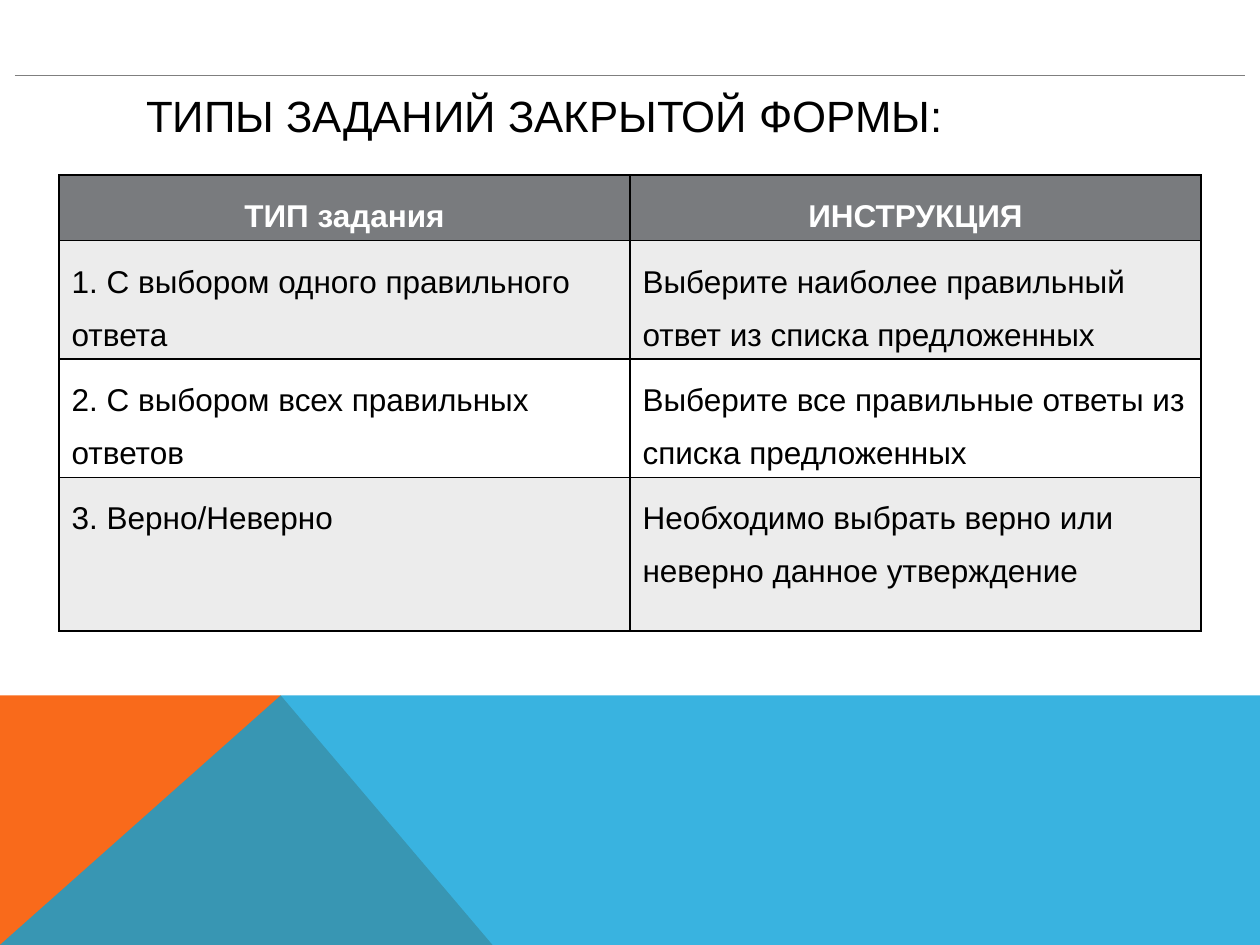
from dataclasses import dataclass

from lxml.etree import SubElement
from pptx import Presentation
from pptx.dml.color import RGBColor
from pptx.enum.shapes import MSO_CONNECTOR
from pptx.enum.text import MSO_ANCHOR, MSO_AUTO_SIZE, PP_ALIGN
from pptx.oxml import parse_xml
from pptx.oxml.ns import nsdecls, qn
from pptx.util import Cm, Pt


@dataclass(frozen=True)
class Theme:
    font: str = "Arial"
    title_size: int = 25
    body_size: int = 18
    text: str = "000000"
    inverse: str = "FFFFFF"
    header: str = "797B7E"
    bands: tuple = ("ECECEC", "FFFFFF")
    border: str = "000000"
    rule: str = "7F7F7F"
    orange: str = "F96A1B"
    blue: str = "08A1D9"


THEME = Theme()
SLIDE_W, SLIDE_H = 25.4, 19.05
BAND_TOP, PEAK_X, FOOT_X = 14.02, 5.66, 9.93
ROWS = [
    ("ТИП задания", "ИНСТРУКЦИЯ"),
    ("1. С выбором одного правильного ответа",
     "Выберите наиболее правильный ответ из списка предложенных"),
    ("2. С выбором всех правильных ответов",
     "Выберите все правильные ответы из списка предложенных"),
    ("3. Верно/Неверно",
     "Необходимо выбрать верно или неверно данное утверждение"),
]
ROW_HEIGHTS = (1.07, 1.83, 1.83, 3.1)


def rgb(color):
    return RGBColor.from_string(color)


def add_run(p, text, size, color, bold=False):
    r = p.add_run()
    r.text = text
    r.font.name = THEME.font
    r.font.size = Pt(size)
    r.font.bold = bold
    r.font.color.rgb = rgb(color)


def add_polygon(slide, points, color, alpha=100):
    start, *rest = [(Cm(x), Cm(y)) for x, y in points]
    builder = slide.shapes.build_freeform(*start)
    builder.add_line_segments(rest, close=True)
    sp = builder.convert_to_shape()
    sp.shadow.inherit = False
    sp.fill.solid()
    sp.fill.fore_color.rgb = rgb(color)
    sp.line.fill.background()
    if alpha < 100:
        clr = sp.fill._xPr.find(".//" + qn("a:srgbClr"))
        SubElement(clr, qn("a:alpha"), val=str(alpha * 1000))


def add_rule(slide, y, margin):
    line = slide.shapes.add_connector(
        MSO_CONNECTOR.STRAIGHT, Cm(margin), Cm(y), Cm(SLIDE_W - margin), Cm(y))
    line.line.color.rgb = rgb(THEME.rule)
    line.line.width = Pt(1)
    SubElement(line._element.spPr, qn("a:effectLst"))


def set_title(slide, text):
    sp = slide.shapes.title
    sp.left, sp.top, sp.width, sp.height = Cm(2.69), Cm(1.52), Cm(22.4), Cm(1.6)
    tf = sp.text_frame
    tf.word_wrap = True
    tf.auto_size = MSO_AUTO_SIZE.NONE
    tf.vertical_anchor = MSO_ANCHOR.MIDDLE
    p = tf.paragraphs[0]
    p.alignment = PP_ALIGN.LEFT
    add_run(p, text, THEME.title_size, THEME.text)


def set_borders(cell):
    tc_pr = cell._tc.get_or_add_tcPr()
    for i, side in enumerate(("lnL", "lnR", "lnT", "lnB")):
        tc_pr.insert(i, parse_xml(
            f'<a:{side} {nsdecls("a")} w="{Pt(1)}"><a:solidFill>'
            f'<a:srgbClr val="{THEME.border}"/></a:solidFill></a:{side}>'))


def fill_cell(cell, text, row):
    is_header = row == 0
    cell.fill.solid()
    cell.fill.fore_color.rgb = rgb(
        THEME.header if is_header else THEME.bands[(row - 1) % 2])
    set_borders(cell)
    p = cell.text_frame.paragraphs[0]
    p.line_spacing = 1.5
    p.alignment = PP_ALIGN.CENTER if is_header else PP_ALIGN.LEFT
    add_run(p, text, THEME.body_size,
            THEME.inverse if is_header else THEME.text, is_header)


def add_task_table(slide):
    table = slide.shapes.add_table(
        len(ROWS), len(ROWS[0]), Cm(1.19), Cm(3.53),
        Cm(23.02), Cm(sum(ROW_HEIGHTS))).table
    for i, (texts, height) in enumerate(zip(ROWS, ROW_HEIGHTS)):
        table.rows[i].height = Cm(height)
        for j, text in enumerate(texts):
            fill_cell(table.cell(i, j), text, i)


def main():
    prs = Presentation()
    prs.slide_width, prs.slide_height = Cm(SLIDE_W), Cm(SLIDE_H)
    slide = prs.slides.add_slide(prs.slide_layouts[5])
    add_polygon(slide, [(0, SLIDE_H), (0, BAND_TOP), (PEAK_X, BAND_TOP),
                        (FOOT_X, SLIDE_H)], THEME.orange)
    add_polygon(slide, [(0, SLIDE_H), (PEAK_X, BAND_TOP), (SLIDE_W, BAND_TOP),
                        (SLIDE_W, SLIDE_H)], THEME.blue, alpha=80)
    add_rule(slide, y=1.52, margin=0.3)
    set_title(slide, "ТИПЫ ЗАДАНИЙ ЗАКРЫТОЙ ФОРМЫ:")
    add_task_table(slide)
    prs.save("out.pptx")


if __name__ == "__main__":
    main()
